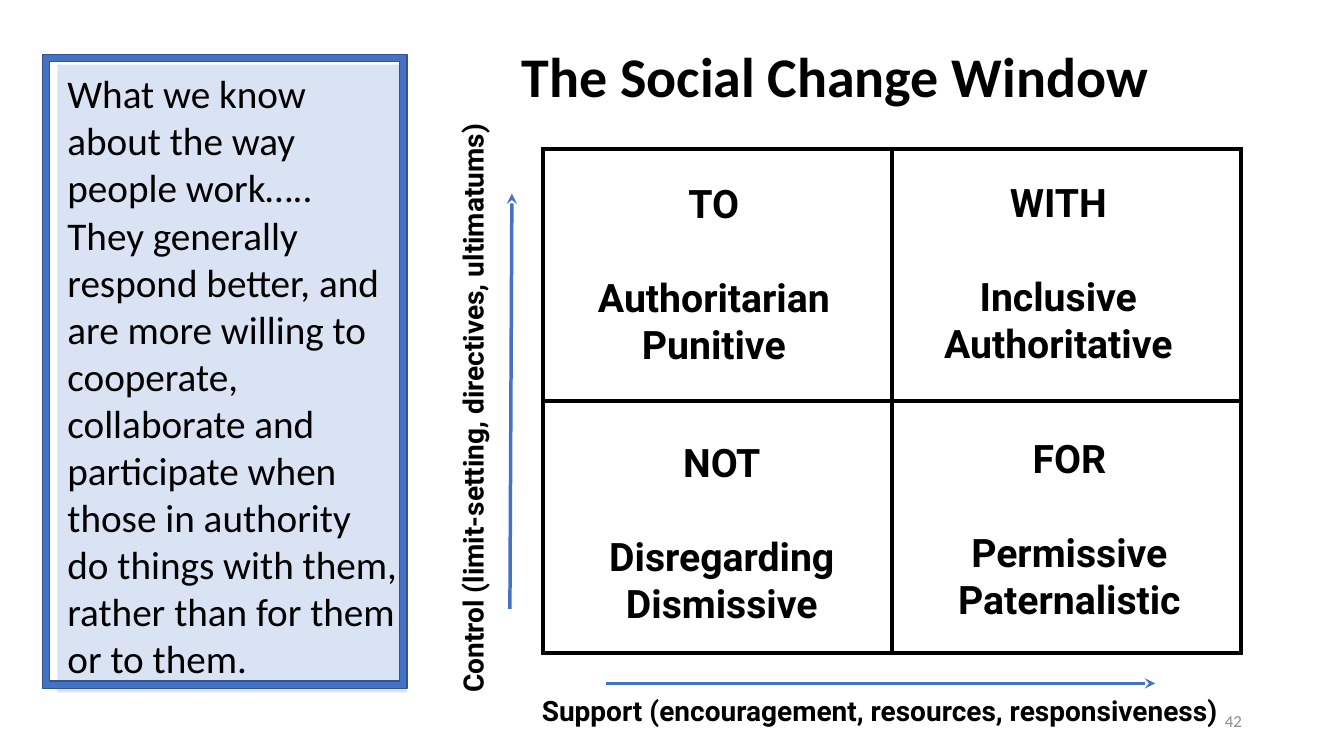
from lxml import etree
from pptx import Presentation
from pptx.dml.color import RGBColor
from pptx.enum.shapes import MSO_CONNECTOR, MSO_SHAPE
from pptx.enum.text import MSO_ANCHOR, PP_ALIGN
from pptx.oxml import parse_xml
from pptx.oxml.ns import qn
from pptx.util import Cm, Pt

LEFT, CENTER, RIGHT = PP_ALIGN.LEFT, PP_ALIGN.CENTER, PP_ALIGN.RIGHT
TOP, MIDDLE = MSO_ANCHOR.TOP, MSO_ANCHOR.MIDDLE
STRAIGHT = MSO_CONNECTOR.STRAIGHT
RECTANGLE, FRAME = MSO_SHAPE.RECTANGLE, MSO_SHAPE.FRAME
DRAWING_NS = "http://schemas.openxmlformats.org/drawingml/2006/main"
BLUE, BLACK, WHITE = "4472C4", "000000", "FFFFFF"


def rgb(value):
    return RGBColor.from_string(value)


def write(box, lines, size, font, color=BLACK, bold=False, align=LEFT, anchor=TOP):
    frame = box.text_frame
    frame.word_wrap = True
    frame.vertical_anchor = anchor
    for index, line in enumerate(lines):
        para = frame.paragraphs[0] if index == 0 else frame.add_paragraph()
        para.alignment = align
        span = para.add_run()
        span.text = line
        span.font.color.rgb = rgb(color)
        for name, value in {"size": Pt(size), "name": font, "bold": bold}.items():
            setattr(span.font, name, value)
    return frame


deck = Presentation()
deck.slide_width, deck.slide_height = Cm(33.87), Cm(19.05)
page = deck.slides.add_slide(deck.slide_layouts[6])
shapes = page.shapes

# Window grid: two by two, black borders
grid = shapes.add_table(2, 2, Cm(13.69), Cm(3.76), Cm(17.58), Cm(12.7)).table
for column in grid.columns:
    column.width = Cm(8.79)
for row in grid.rows:
    row.height = Cm(6.35)
for cell in grid.iter_cells():
    cell.fill.solid()
    cell.fill.fore_color.rgb = rgb(WHITE)
    for position, side in enumerate(("lnL", "lnR", "lnT", "lnB")):
        border = parse_xml(
            f'<a:{side} xmlns:a="{DRAWING_NS}" w="{Pt(3)}"><a:solidFill>'
            f'<a:srgbClr val="{BLACK}"/></a:solidFill></a:{side}>')
        cell._tc.get_or_add_tcPr().insert(position, border)

# Quadrant labels: heading, gap, two descriptions
quadrants = [
    (14.2, 10.92, 4.11, ["NOT", "Disregarding", "Dismissive"]),
    (22.96, 10.82, 4.11, ["FOR", "Permissive", "Paternalistic"]),
    (14.0, 4.39, 4.11, ["TO", "Authoritarian", "Punitive"]),
    (22.68, 4.37, 5.13, ["WITH", "Inclusive", "Authoritative"]),
]
for left, top, height, lines in quadrants:
    box = shapes.add_textbox(Cm(left), Cm(top), Cm(7.98), Cm(height))
    frame = write(box, lines, 28, "Roboto", bold=True, align=CENTER)
    frame.paragraphs[1].space_before = Pt(33.5)

# Axis arrows
for ends in [(12.85, 15.34, 12.9, 4.88), (15.27, 17.22, 29.11, 17.22)]:
    arrow = shapes.add_connector(STRAIGHT, *[Cm(value) for value in ends])
    arrow.line.color.rgb = rgb(BLUE)
    arrow.line.width = Pt(2.5)
    etree.SubElement(arrow.line._get_or_add_ln(), qn("a:tailEnd"), type="stealth")
    etree.SubElement(arrow._element.spPr, qn("a:effectLst"))

# Axis labels
axis_labels = [
    ("Control (limit-setting, directives, ultimatums)", 4.14, 9.65, 15.7, 1.27, 270),
    ("Support (encouragement, resources, responsiveness)", 12.09, 17.35, 20.17, 1.02, 0),
]
for label, left, top, width, height, angle in axis_labels:
    box = shapes.add_textbox(Cm(left), Cm(top), Cm(width), Cm(height))
    box.rotation = angle
    write(box, [label], 20, "Roboto", bold=True, align=CENTER)

# Title and page number
title = shapes.add_textbox(Cm(12.9), Cm(0.91), Cm(20.95), Cm(1.96))
write(title, ["The Social Change Window"], 40, "Calibri", bold=True)
number = shapes.add_textbox(Cm(23.93), Cm(17.65), Cm(7.62), Cm(1.02))
write(number, ["42"], 12, "Calibri", color="8C8C8C", align=RIGHT, anchor=MIDDLE)

# Side panel and its frame
panel = shapes.add_shape(RECTANGLE, Cm(1.45), Cm(1.63), Cm(8.81), Cm(15.82))
panel.line.fill.background()
write(panel, [
    "What we know about the way people work…..",
    "They generally respond better, and are more willing to cooperate, "
    "collaborate and participate when those in authority do things with them, "
    "rather than for them or to them.",
], 28, "Calibri")
border_frame = shapes.add_shape(FRAME, Cm(1.07), Cm(1.37), Cm(9.19), Cm(15.98))
border_frame.adjustments[0] = 0.02
border_frame.line.color.rgb = rgb("325491")
border_frame.line.width = Pt(1)
for shape, color in [(panel, "DAE3F3"), (border_frame, BLUE)]:
    shape.shadow.inherit = False
    shape.fill.solid()
    shape.fill.fore_color.rgb = rgb(color)

deck.save("out.pptx")
